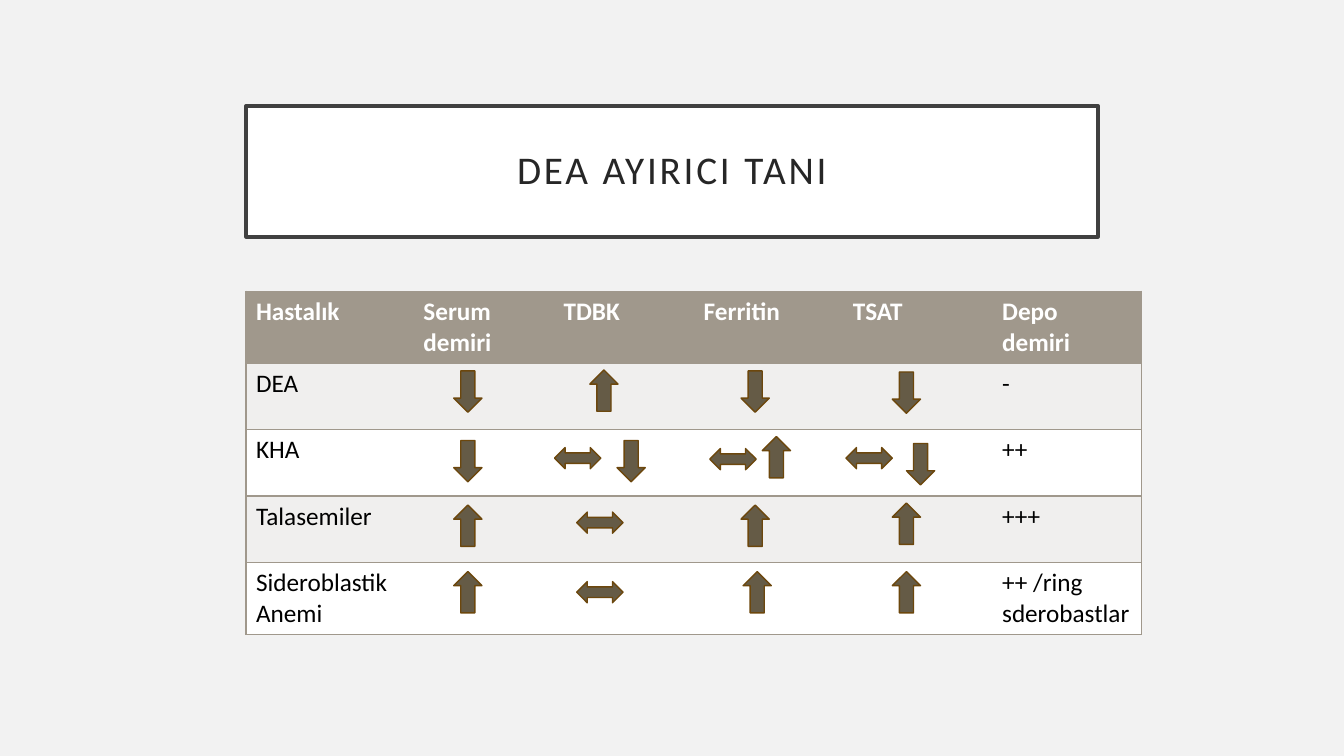
from dataclasses import dataclass

from lxml.etree import SubElement
from pptx import Presentation
from pptx.dml.color import RGBColor
from pptx.enum.shapes import MSO_SHAPE as Shape
from pptx.enum.text import MSO_ANCHOR as Anchor, MSO_AUTO_SIZE as Fit, PP_ALIGN as Align
from pptx.oxml.ns import qn
from pptx.slide import Slide
from pptx.table import _Cell as Cell
from pptx.util import Inches, Pt

FONT = "Calibri"
TAUPE = "A0988C"
WHITE = "FFFFFF"
BAND = "F0EFEE"
WIDTHS = (1.66, 1.39, 1.39, 1.48, 1.48, 1.48)
ROW_H = 0.66
ROWS = (
    ("Hastalık", "Serum demiri", "TDBK", "Ferritin", "TSAT", "Depo demiri"),
    ("DEA", "", "", "", "", "-"),
    ("KHA", "", "", "", "", "++"),
    ("Talasemiler", "", "", "", "", "+++"),
    ("Sideroblastik Anemi", "", "", "", "", "++ /ring sderobastlar"),
)


@dataclass(frozen=True)
class Kind:
    shape: Shape
    width: float
    height: float
    turn: int = 0


@dataclass(frozen=True)
class Arrow:
    kind: Kind
    left: float
    top: float


DOWN = Kind(Shape.DOWN_ARROW, 0.28, 0.41)
UP = Kind(Shape.DOWN_ARROW, 0.28, 0.41, 180)
SAME = Kind(Shape.LEFT_RIGHT_ARROW, 0.46, 0.21)

ARROWS = (
    # DEA
    Arrow(DOWN, 4.5, 3.68), Arrow(UP, 5.85, 3.67),
    Arrow(DOWN, 7.35, 3.68), Arrow(DOWN, 8.85, 3.69),
    # KHA
    Arrow(DOWN, 4.5, 4.37), Arrow(SAME, 5.5, 4.44), Arrow(DOWN, 6.12, 4.37),
    Arrow(SAME, 7.04, 4.45), Arrow(UP, 7.56, 4.33),
    Arrow(SAME, 8.39, 4.44), Arrow(DOWN, 8.99, 4.4),
    # Talasemiler
    Arrow(UP, 4.5, 5.01), Arrow(SAME, 5.72, 5.08),
    Arrow(UP, 7.35, 5.01), Arrow(UP, 8.85, 4.99),
    # Sideroblastik Anemi
    Arrow(UP, 4.5, 5.67), Arrow(SAME, 5.72, 5.77),
    Arrow(UP, 7.37, 5.67), Arrow(UP, 8.85, 5.67),
)


def rgb(code: str) -> RGBColor:
    return RGBColor.from_string(code)


def paint(shape, fill: str, line: str, width: float) -> None:
    shape.fill.solid()
    shape.fill.fore_color.rgb = rgb(fill)
    shape.line.color.rgb = rgb(line)
    shape.line.width = Pt(width)


def add_title(slide: Slide, text: str) -> None:
    title = slide.shapes.title
    title.left, title.top = Inches(2.44), Inches(1.05)
    title.width, title.height = Inches(8.45), Inches(1.3)
    paint(title, WHITE, "404040", 2.5)
    frame = title.text_frame
    frame.text = text
    frame.word_wrap = True
    frame.auto_size = Fit.NONE
    frame.vertical_anchor = Anchor.MIDDLE
    frame.margin_left = frame.margin_right = Inches(0.2)
    frame.margin_top = frame.margin_bottom = Inches(0.2)
    para = frame.paragraphs[0]
    para.alignment = Align.CENTER
    para.line_spacing = 0.9
    run = para.runs[0]
    run.font.name, run.font.size = FONT, Pt(28)
    run.font.color.rgb = rgb("262626")
    run.font._element.set("spc", "200")


def set_edges(cell: Cell, drawn: str) -> None:
    """Rule the sides named in drawn (of L, R, T, B) and clear the others."""
    props = cell._tc.get_or_add_tcPr()
    for side in "LRTB":
        line = SubElement(props, qn(f"a:ln{side}"), w=str(Pt(1)))
        if side in drawn:
            fill = SubElement(line, qn("a:solidFill"))
            SubElement(fill, qn("a:srgbClr"), val=TAUPE)
        else:
            SubElement(line, qn("a:noFill"))


def add_grid(slide: Slide) -> None:
    table = slide.shapes.add_table(
        len(ROWS), len(WIDTHS), Inches(2.44), Inches(2.89),
        Inches(sum(WIDTHS)), Inches(ROW_H * len(ROWS))).table
    for col, width in zip(table.columns, WIDTHS):
        col.width = Inches(width)
    last = len(WIDTHS) - 1
    for r, texts in enumerate(ROWS):
        table.rows[r].height = Inches(ROW_H)
        head = r == 0
        fill = TAUPE if head else BAND if r % 2 else WHITE
        for c, text in enumerate(texts):
            cell = table.cell(r, c)
            set_edges(cell, "TB" + {0: "L", last: "R"}.get(c, ""))
            cell.fill.solid()
            cell.fill.fore_color.rgb = rgb(fill)
            cell.text = text
            font = cell.text_frame.paragraphs[0].font
            font.name, font.size, font.bold = FONT, Pt(18), head
            font.color.rgb = rgb(WHITE if head else "000000")


def add_arrow(slide: Slide, arrow: Arrow) -> None:
    kind = arrow.kind
    shape = slide.shapes.add_shape(
        kind.shape, Inches(arrow.left), Inches(arrow.top),
        Inches(kind.width), Inches(kind.height))
    shape.rotation = kind.turn
    shape.shadow.inherit = False
    paint(shape, "655B46", "6C470D", 1)


def main() -> None:
    deck = Presentation()
    deck.slide_width, deck.slide_height = Inches(13.33), Inches(7.5)
    slide = deck.slides.add_slide(deck.slide_layouts.get_by_name("Title Only"))
    slide.background.fill.solid()
    slide.background.fill.fore_color.rgb = rgb("F2F2F2")
    add_title(slide, "DEA AYIRICI TANI")
    add_grid(slide)
    for arrow in ARROWS:
        add_arrow(slide, arrow)
    deck.save("out.pptx")


if __name__ == "__main__":
    main()
